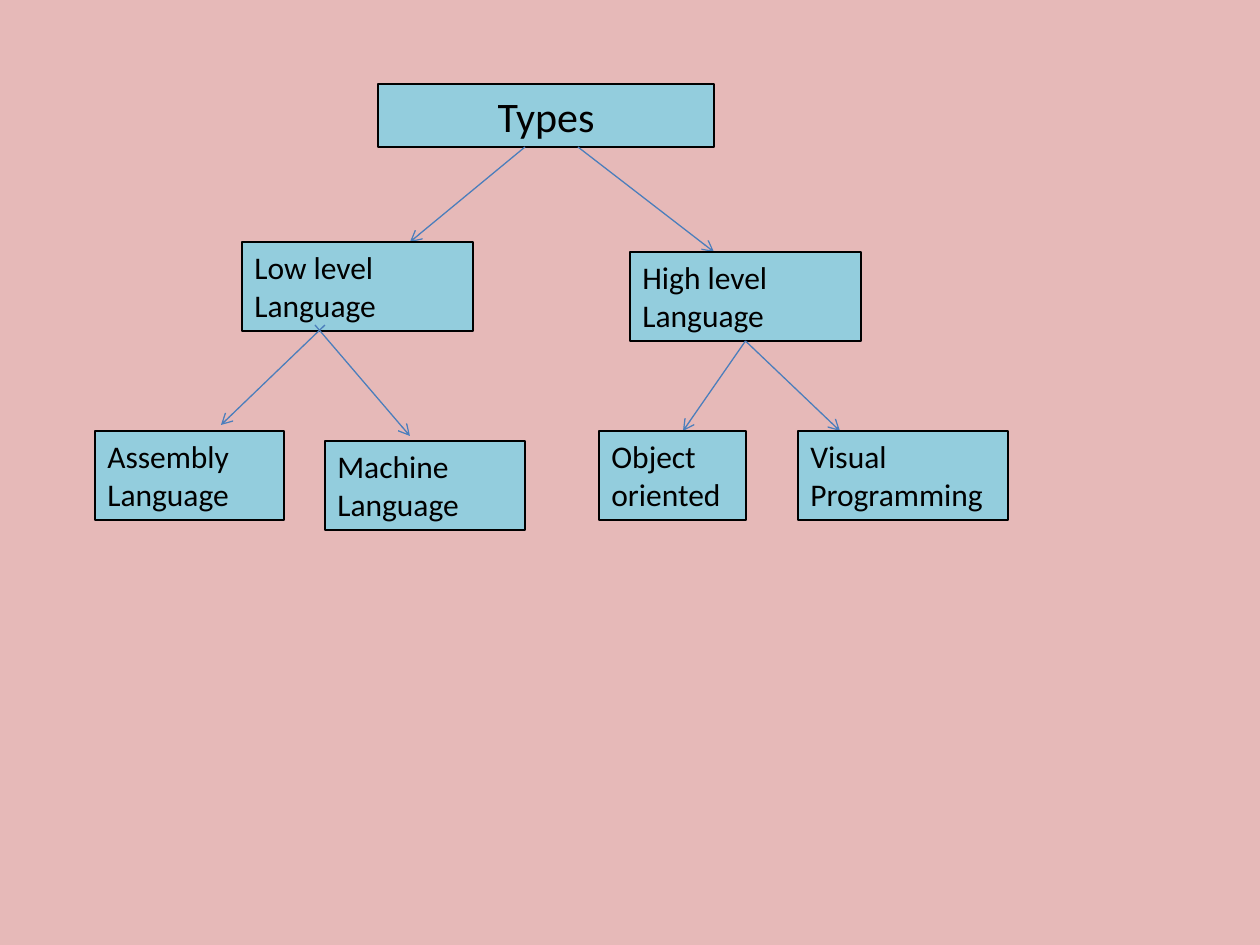
from lxml import etree
from pptx import Presentation
from pptx.dml.color import RGBColor
from pptx.enum.shapes import MSO_CONNECTOR, MSO_SHAPE
from pptx.enum.text import MSO_ANCHOR, MSO_AUTO_SIZE, PP_ALIGN
from pptx.oxml.ns import qn
from pptx.util import Pt

RECT = MSO_SHAPE.RECTANGLE
LINE = MSO_CONNECTOR.STRAIGHT
TOP = MSO_ANCHOR.TOP
GROW = MSO_AUTO_SIZE.SHAPE_TO_FIT_TEXT
LEFT, MID = PP_ALIGN.LEFT, PP_ALIGN.CENTER
SCALE = 914400 // 126
FONT = "Calibri"
PINK, BLUE, BLACK, STEEL = "E6B9B8", "93CDDD", "000000", "4B7EBC"
BOTTOM = 2


def px(n):
    """Turn pixels into EMU."""
    return n * SCALE


def tint(fill, color):
    """Make a fill solid in a hex colour."""
    fill.solid()
    fill.fore_color.rgb = RGBColor.from_string(color)


def card(slide, box, text, size=18, align=LEFT):
    """Draw one labelled box of the tree."""
    shape = slide.shapes.add_shape(RECT, *map(px, box))
    shape.shadow.inherit = False
    tint(shape.fill, BLUE)
    tint(shape.line.fill, BLACK)
    shape.line.width = Pt(1)
    frame = shape.text_frame
    frame.text = text
    frame.word_wrap = True
    frame.auto_size = GROW
    frame.vertical_anchor = TOP
    para = frame.paragraphs[0]
    para.alignment = align
    font = para.runs[0].font
    font.name, font.size = FONT, Pt(size)
    tint(font.fill, BLACK)
    return shape


def arrow(slide, start, end):
    """Draw a thin line with an open arrowhead at its end."""
    line = slide.shapes.add_connector(LINE, *map(px, start + end))
    tint(line.line.fill, STEEL)
    line.line.width = Pt(0.75)
    stroke = line.line._get_or_add_ln()
    etree.SubElement(stroke, qn("a:tailEnd"), type="arrow")
    etree.SubElement(line._element.spPr, qn("a:effectLst"))
    return line


def branch(slide, root, box, links, kids):
    """Draw arrows and child boxes, placed relative to the parent box."""
    left, top, width, height = box
    for start, end in links:
        ends = [(left + x, top + y) for x, y in (start, end)]
        line = arrow(slide, *ends)
        if start == (width // 2, height):
            line.begin_connect(root, BOTTOM)
    nodes = []
    for x, y, wide, text in kids:
        area = (left + x, top + y, wide, 89)
        nodes.append((card(slide, area, text), area))
    return nodes


def tree(slide, box):
    """Draw the whole tree below its title box."""
    root = card(slide, box, "Types", 24, MID)
    low, high = branch(
        slide, root, box,
        [((147, 63), (32, 158)), ((200, 63), (336, 168))],
        [(-136, 158, 231, "Low level Language"),
         (252, 168, 231, "High level Language")])
    branch(
        slide, *low,
        [((83, 83), (-21, 183)), ((73, 83), (168, 194))],
        [(-147, 189, 189, "Assembly Language"),
         (83, 199, 200, "Machine Language")])
    branch(
        slide, *high,
        [((115, 89), (53, 179)), ((115, 89), (210, 179))],
        [(-31, 179, 147, "Object oriented"),
         (168, 179, 210, "Visual Programming")])


def main():
    """Build and save the slide."""
    deck = Presentation()
    deck.slide_width, deck.slide_height = px(1260), px(945)
    slide = deck.slides.add_slide(deck.slide_layouts[6])
    tint(slide.background.fill, PINK)
    tree(slide, (378, 84, 336, 63))
    deck.save("out.pptx")


if __name__ == "__main__":
    main()
